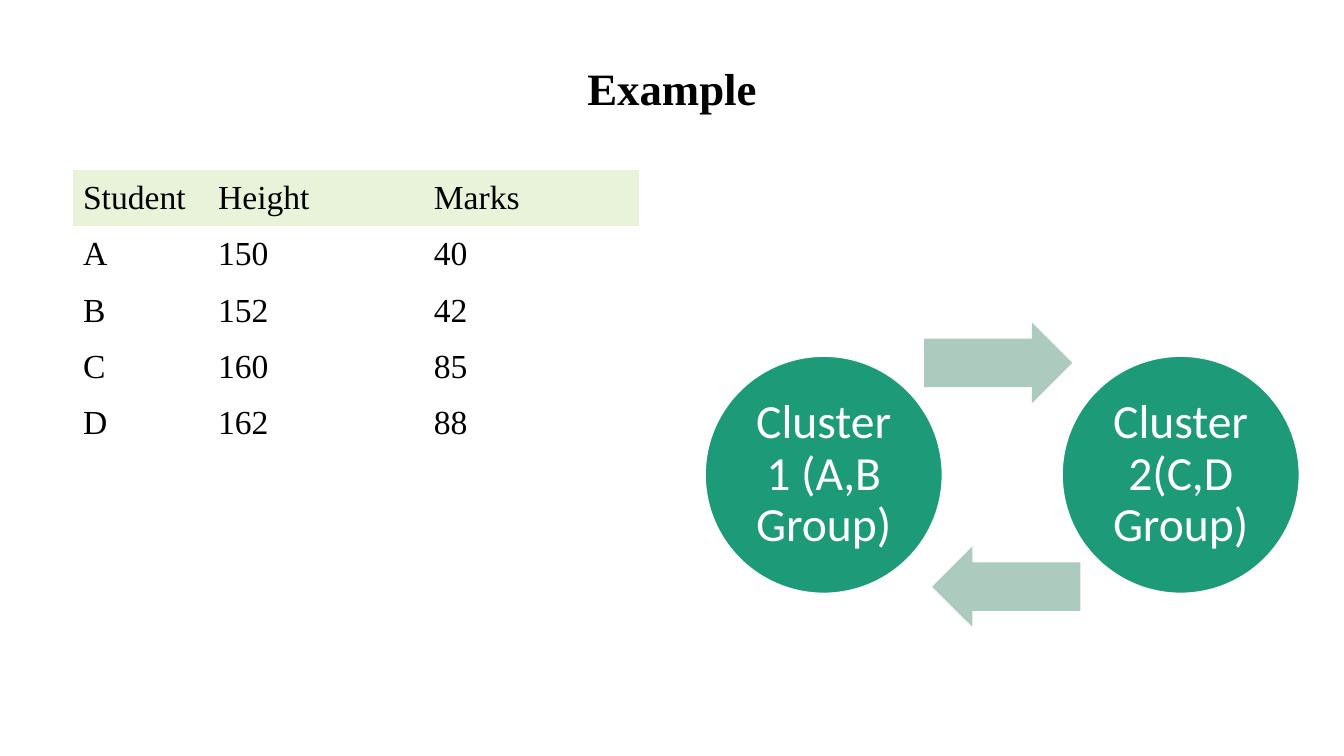
from pptx import Presentation
from pptx.dml.color import RGBColor
from pptx.enum.shapes import MSO_SHAPE
from pptx.enum.text import MSO_ANCHOR, PP_ALIGN
from pptx.oxml.ns import qn
from pptx.util import Inches, Pt

CIRCLE, ARROW = MSO_SHAPE.OVAL, MSO_SHAPE.RIGHT_ARROW
MIDDLE, CENTER = MSO_ANCHOR.MIDDLE, PP_ALIGN.CENTER

HEADING = "Example"
STUDENTS = [
    ("Student", "Height", "Marks"),
    ("A", "150", "40"),
    ("B", "152", "42"),
    ("C", "160", "85"),
    ("D", "162", "88"),
]
CLUSTERS = ["Cluster 1 (A,B Group)", "Cluster 2(C,D Group)"]

THEME = {
    "header": RGBColor.from_string("E8F3DA"),
    "cluster": RGBColor.from_string("1D9A78"),
    "arrow": RGBColor.from_string("ACCABE"),
    "outline": RGBColor.from_string("FFFFFF"),
    "heading": {"name": "Times New Roman", "size": Pt(32), "bold": True,
                "color": RGBColor.from_string("000000")},
    "cell": {"name": "Times New Roman", "size": Pt(24),
             "color": RGBColor.from_string("000000")},
    "label": {"name": "Calibri", "size": Pt(34),
              "color": RGBColor.from_string("FFFFFF")},
}
FRAME = {"word_wrap": True, "vertical_anchor": MIDDLE}
CLUSTER_FRAME = FRAME | {f"margin_{side}": Inches(0.05)
                         for side in ("left", "top", "right", "bottom")}
CENTERED = {"alignment": CENTER, "line_spacing": 0.9}
PLAIN_STYLE = "{2D5ABB26-0587-4C30-8999-92F81FD0307C}"

deck = Presentation()
deck.slide_width, deck.slide_height = Inches(13.33), Inches(7.5)
slide = deck.slides.add_slide(deck.slide_layouts[6])


def across(percent):
    return round(deck.slide_width * percent / 100)


def down(percent):
    return round(deck.slide_height * percent / 100)


def assign(target, values):
    for key, value in values.items():
        setattr(target, key, value)


def write(frame, words, style, layout):
    paragraph = frame.paragraphs[0]
    assign(paragraph, layout)
    run = paragraph.add_run()
    run.text = words
    assign(run.font, {k: v for k, v in style.items() if k != "color"})
    run.font.color.rgb = style["color"]


def centered_shape(kind, middle_x, middle_y, width, height, color):
    shape = slide.shapes.add_shape(
        kind, middle_x - width // 2, middle_y - height // 2, width, height)
    shape.shadow.inherit = False
    shape.fill.solid()
    shape.fill.fore_color.rgb = color
    shape.line.fill.background()
    return shape


heading = slide.shapes.add_textbox(
    across(6.88), down(5.33), across(86.25), down(13.33)).text_frame
assign(heading, FRAME)
write(heading, HEADING, THEME["heading"], CENTERED)

COLUMN_SHARES, ROW_SHARE = (10.05, 16.05, 16.05), 7.45
students = slide.shapes.add_table(
    len(STUDENTS), len(COLUMN_SHARES), across(5.43), down(22.5),
    across(sum(COLUMN_SHARES)), down(ROW_SHARE * len(STUDENTS))).table
assign(students, {"first_row": False, "horz_banding": False})
students._tbl.tblPr.find(qn("a:tableStyleId")).text = PLAIN_STYLE
for column, share in zip(students.columns, COLUMN_SHARES):
    column.width = across(share)
for row_number, values in enumerate(STUDENTS):
    students.rows[row_number].height = down(ROW_SHARE)
    for column_number, value in enumerate(values):
        cell = students.cell(row_number, column_number)
        cell.vertical_anchor = MIDDLE
        if row_number == 0:
            cell.fill.solid()
            cell.fill.fore_color.rgb = THEME["header"]
        else:
            cell.fill.background()
        write(cell.text_frame, value, THEME["cell"], {})

CYCLE_X, CYCLE_Y = across(74.57), down(62.8)
DIAMETER, CLUSTER_REACH = across(17.7), across(13.28)
ARROW_WIDTH, ARROW_HEIGHT = across(11.03), down(10.67)
ARROW_SHIFT, ARROW_RISE = across(0.3), down(14.8)

for label, side in zip(CLUSTERS, (-1, 1)):
    cluster = centered_shape(CIRCLE, CYCLE_X + side * CLUSTER_REACH, CYCLE_Y,
                             DIAMETER, DIAMETER, THEME["cluster"])
    cluster.line.color.rgb = THEME["outline"]
    cluster.line.width = Pt(1.5)
    assign(cluster.text_frame, CLUSTER_FRAME)
    write(cluster.text_frame, label, THEME["label"], CENTERED)

    arrow = centered_shape(ARROW, CYCLE_X + side * ARROW_SHIFT,
                           CYCLE_Y + side * ARROW_RISE,
                           ARROW_WIDTH, ARROW_HEIGHT, THEME["arrow"])
    arrow.adjustments[0], arrow.adjustments[1] = 0.6, 0.5
    arrow.rotation = 90 * (side + 1)

deck.save("out.pptx")
